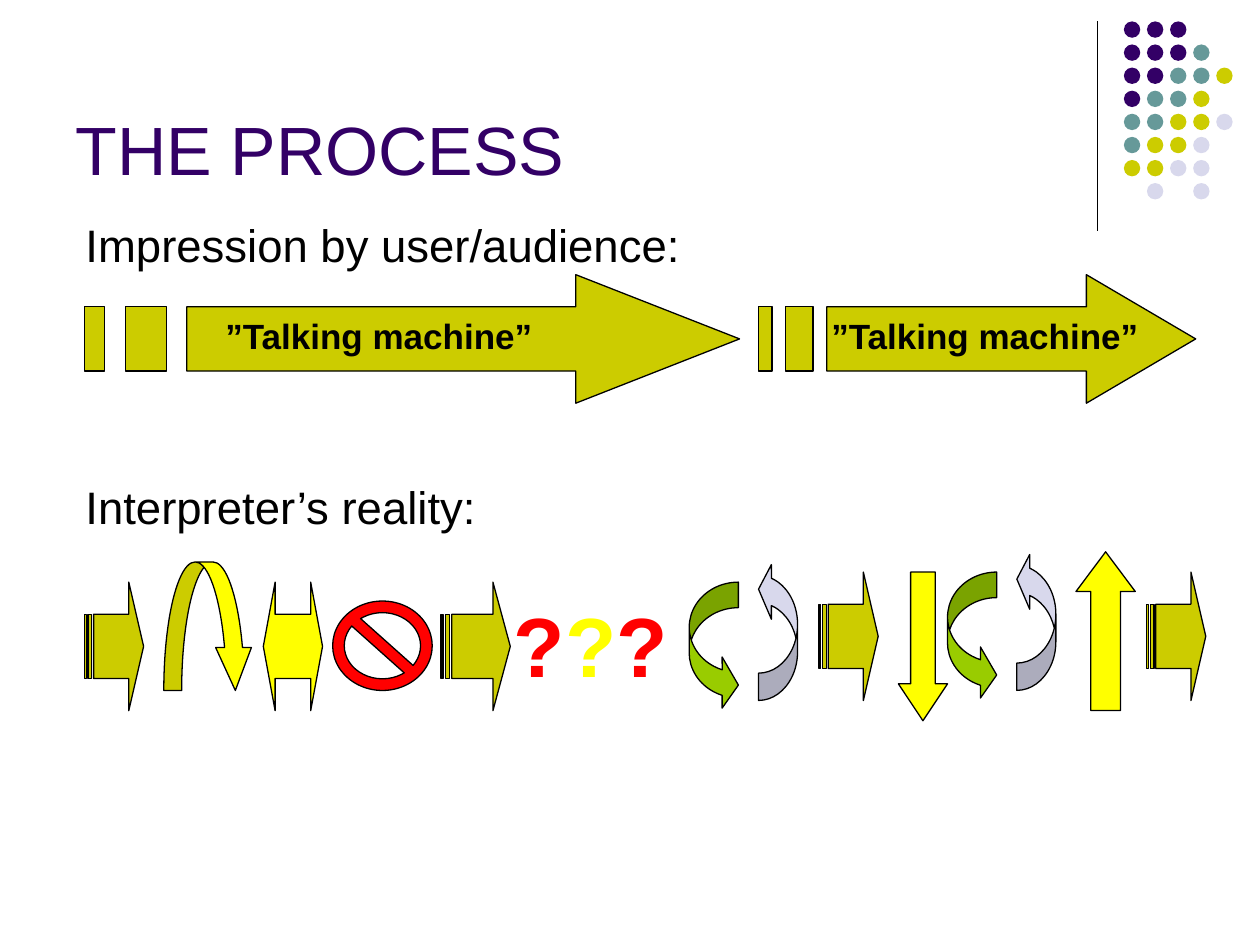
import pptx
import pptx.dml.color
import pptx.enum.shapes
import pptx.enum.text
import pptx.oxml
import pptx.oxml.ns
import pptx.util

Inches = pptx.util.Inches
Pt = pptx.util.Pt
Shape = pptx.enum.shapes.MSO_SHAPE

FONT = "Arial"
BLACK = "000000"
PURPLE = "330066"
TEAL = "669999"
OLIVE = "CCCC00"
LAVENDER = "D8D8EC"
YELLOW = "FFFF00"
RED = "FF0000"
GREEN = "99CC00"

DOT_COLOURS = {"P": PURPLE, "T": TEAL, "O": OLIVE, "L": LAVENDER}
DOT_ROWS = ["PPP", "PPPT", "PPTTO", "PTTO", "TTOOL", "TOOL", "OOLL", " L L"]
DOT_PITCH = 0.55 / 3


def colour(value):
    return pptx.dml.color.RGBColor.from_string(value)


class SlideBuilder:
    def __init__(self, presentation):
        layout = presentation.slide_layouts.get_by_name("Title Only")
        self.slide = presentation.slides.add_slide(layout)
        self.shapes = self.slide.shapes

    def paint(self, shape, fill, outlined=True):
        shape.shadow.inherit = False
        shape.fill.solid()
        shape.fill.fore_color.rgb = colour(fill)
        if outlined:
            shape.line.color.rgb = colour(BLACK)
            shape.line.width = Pt(0.75)
        else:
            shape.line.fill.background()

    def style(self, paragraph, size, text_colour, bold=False):
        paragraph.font.name = FONT
        paragraph.font.size = Pt(size)
        paragraph.font.bold = bold
        paragraph.font.color.rgb = colour(text_colour)

    def title(self, text, left, top, width, height):
        title = self.shapes.title
        title.left, title.top = Inches(left), Inches(top)
        title.width, title.height = Inches(width), Inches(height)
        frame = title.text_frame
        frame.text = text
        frame.auto_size = pptx.enum.text.MSO_AUTO_SIZE.NONE
        frame.vertical_anchor = pptx.enum.text.MSO_ANCHOR.BOTTOM
        paragraph = frame.paragraphs[0]
        paragraph.alignment = pptx.enum.text.PP_ALIGN.LEFT
        self.style(paragraph, 39, PURPLE)

    def text(self, text, left, top, width, height, size, bold=False, space_before=0):
        box = self.shapes.add_textbox(Inches(left), Inches(top), Inches(width), Inches(height))
        box.text_frame.word_wrap = True
        paragraph = box.text_frame.paragraphs[0]
        paragraph.text = text
        paragraph.space_before = Pt(space_before)
        self.style(paragraph, size, BLACK, bold)
        return paragraph

    def question_marks(self, colours, left, top, width, height):
        paragraph = self.text("", left, top, width, height, 48, bold=True)
        for mark_colour in colours:
            run = paragraph.add_run()
            run.text = "?"
            run.font.color.rgb = colour(mark_colour)

    def line(self, x1, y1, x2, y2):
        connector = self.shapes.add_connector(
            pptx.enum.shapes.MSO_CONNECTOR.STRAIGHT,
            Inches(x1), Inches(y1), Inches(x2), Inches(y2))
        connector.line.color.rgb = colour(BLACK)
        connector.line.width = Pt(0.75)
        properties = connector._element.spPr
        properties.append(pptx.oxml.parse_xml(
            f'<a:effectLst {pptx.oxml.ns.nsdecls("a")}/>'))

    def preset(self, kind, left, top, width, height, fill,
               adjustments=(), flipped=False, outlined=True):
        shape = self.shapes.add_shape(
            kind, Inches(left), Inches(top), Inches(width), Inches(height))
        for index, value in enumerate(adjustments):
            shape.adjustments[index] = value
        if flipped:
            shape._element.spPr.xfrm.set("flipV", "1")
        self.paint(shape, fill, outlined)

    def striped_arrow(self, left, top, width, height=1.02):
        """Arrow whose tail stripes scale with its width, in 32nds."""
        def point(x, y):
            return Inches(left + width * x / 32), Inches(top + height * y / 4)

        contours = [
            [(24, 0), (24, 1), (5, 1), (5, 3), (24, 3), (24, 4), (32, 2)],
            [(2, 1), (2, 3), (4, 3), (4, 1)],
            [(0, 1), (0, 3), (1, 3), (1, 1)],
        ]
        start = point(*contours[0][0])
        builder = self.shapes.build_freeform(*start)
        for index, contour in enumerate(contours):
            if index:
                builder.move_to(*point(*contour[0]))
            builder.add_line_segments([point(*corner) for corner in contour[1:]], close=True)
        self.paint(builder.convert_to_shape(), OLIVE)

    def dot_grid(self, left, top):
        for row, letters in enumerate(DOT_ROWS):
            for column, letter in enumerate(letters):
                if letter in DOT_COLOURS:
                    self.preset(Shape.OVAL, left + column * DOT_PITCH, top + row * DOT_PITCH,
                                0.13, 0.13, DOT_COLOURS[letter], outlined=False)

    def cycle(self, left, top, right, right_top):
        """Pair of curved arrows chasing each other."""
        self.preset(Shape.CURVED_RIGHT_ARROW, left, top, 0.39, 1.02, GREEN, (0.52, 1.04, 0.33))
        self.preset(Shape.CURVED_LEFT_ARROW, right, right_top, 0.31, 1.1, LAVENDER,
                    (0.7, 1.4, 0.33), flipped=True)


def main():
    presentation = pptx.Presentation()
    presentation.slide_width = Inches(10)
    presentation.slide_height = Inches(7.5)
    builder = SlideBuilder(presentation)

    builder.line(8.71, 0.17, 8.71, 1.83)
    builder.dot_grid(8.92, 0.17)
    builder.title("THE PROCESS", 0.5, 0.13, 8.25, 1.42)

    builder.text("Impression by user/audience:", 0.58, 1.67, 8.99, 0.58, 26, space_before=3.5)
    for left, width, text_left, text_width in [(0.67, 5.2, 1.69, 2.99), (6.02, 3.47, 6.5, 2.83)]:
        builder.striped_arrow(left, 2.18, width)
        builder.text("”Talking machine”", text_left, 2.45, text_width, 0.44, 20, bold=True)

    builder.text("Interpreter’s reality:", 0.58, 3.75, 8.99, 0.63, 26, space_before=3.5)
    for left, top, width in [(0.67, 4.62, 0.47), (3.5, 4.62, 0.55),
                             (6.5, 4.54, 0.47), (9.1, 4.54, 0.47)]:
        builder.striped_arrow(left, top, width)
    builder.preset(Shape.CURVED_DOWN_ARROW, 1.3, 4.46, 0.71, 1.02, YELLOW, (0.2, 0.4, 0.48))
    builder.preset(Shape.LEFT_RIGHT_ARROW, 2.09, 4.62, 0.47, 1.02, YELLOW, (0.5, 0.2))
    builder.preset(Shape.NO_SYMBOL, 2.64, 4.77, 0.79, 0.71, RED, (0.13,))
    builder.question_marks([RED, YELLOW, RED], 3.98, 4.66, 1.49, 0.9)
    builder.cycle(5.47, 4.62, 6.02, 4.46)
    builder.preset(Shape.DOWN_ARROW, 7.13, 4.54, 0.39, 1.18, YELLOW, (0.5, 0.75))
    builder.cycle(7.52, 4.54, 8.07, 4.38)
    builder.preset(Shape.UP_ARROW, 8.54, 4.38, 0.47, 1.26, YELLOW, (0.5, 0.67))

    presentation.save("out.pptx")


if __name__ == "__main__":
    main()
